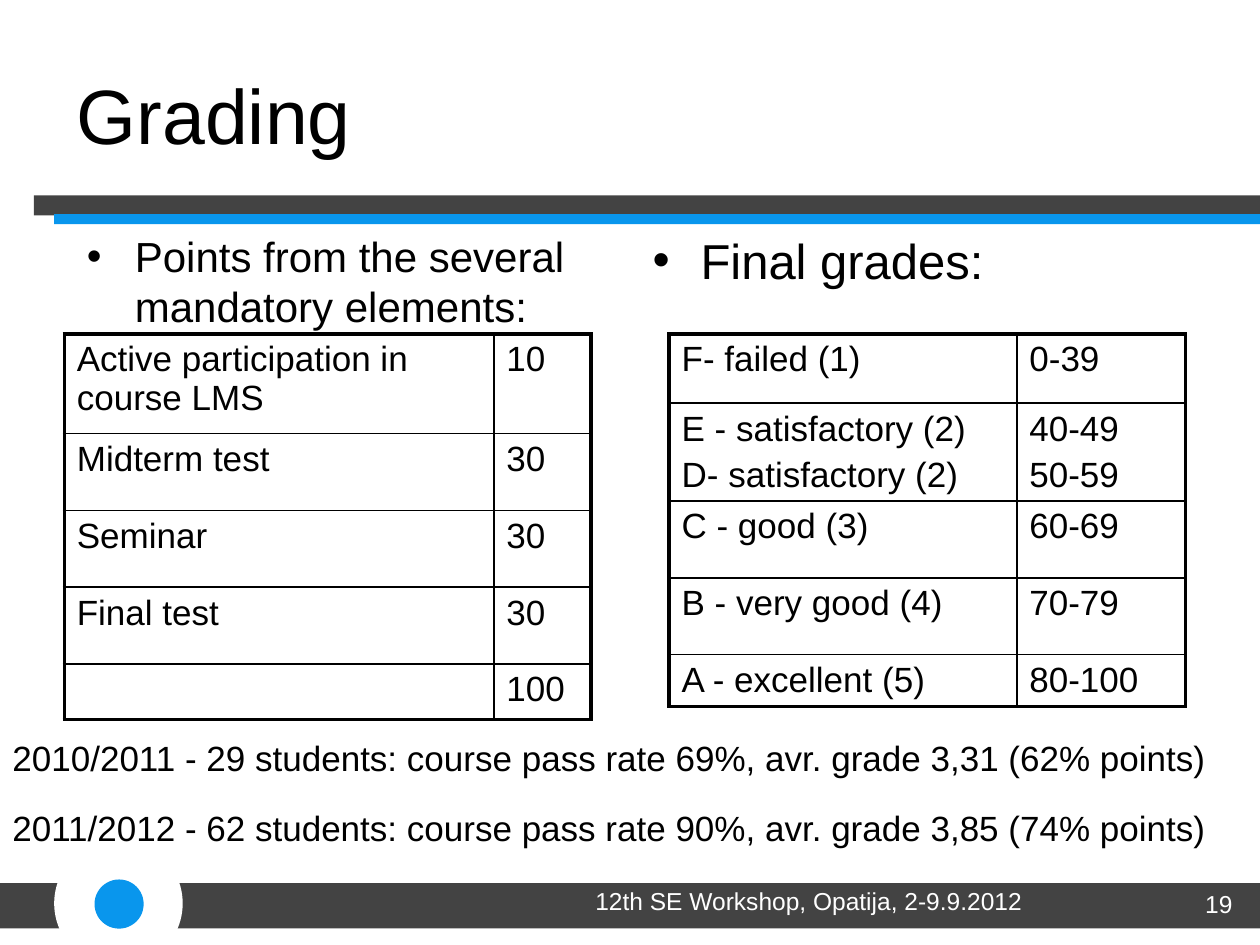
from lxml import etree
from pptx import Presentation
from pptx.dml.color import RGBColor
from pptx.enum.shapes import MSO_SHAPE
from pptx.enum.text import MSO_ANCHOR, MSO_AUTO_SIZE, PP_ALIGN
from pptx.oxml.ns import qn
from pptx.util import Inches, Pt

RECT, OVAL = MSO_SHAPE.RECTANGLE, MSO_SHAPE.OVAL
LEFT, CENTER, RIGHT = PP_ALIGN.LEFT, PP_ALIGN.CENTER, PP_ALIGN.RIGHT
TOP, MIDDLE = MSO_ANCHOR.TOP, MSO_ANCHOR.MIDDLE
NO_FIT = MSO_AUTO_SIZE.NONE
FIT_SHAPE = MSO_AUTO_SIZE.SHAPE_TO_FIT_TEXT


def rgb(value):
    return RGBColor.from_string(value)


class Deck:
    FONT = "Arial"
    BLACK, WHITE, GRAY, BLUE = "000000", "FFFFFF", "434343", "0996ED"
    THICK, THIN = Pt(2.25), Pt(1)

    def __init__(self, s):
        self.s = s

    def style(self, p, size, color=BLACK, align=LEFT):
        p.font.name = self.FONT
        p.font.size = Pt(size)
        p.font.color.rgb = rgb(color)
        p.alignment = align

    def shape(self, kind, x, y, w, h, color):
        sp = self.s.shapes.add_shape(kind, Inches(x), Inches(y), Inches(w), Inches(h))
        sp.shadow.inherit = False
        sp.fill.solid()
        sp.fill.fore_color.rgb = rgb(color)
        sp.line.fill.background()

    def placeholder(self, idx, text, x, y, w, h, size, anchor=TOP):
        sp = self.s.placeholders[idx]
        sp.left, sp.top, sp.width, sp.height = Inches(x), Inches(y), Inches(w), Inches(h)
        tf = sp.text_frame
        tf.text = text
        tf.auto_size = NO_FIT
        tf.vertical_anchor = anchor
        p = tf.paragraphs[0]
        self.style(p, size)
        return p

    def bullet(self, idx, text, x, y, w, h, size):
        p = self.placeholder(idx, text, x, y, w, h, size)
        p.space_before = Pt(size * 0.2)
        pPr = p._p.get_or_add_pPr()
        pPr.set("marL", str(Inches(0.38)))
        pPr.set("indent", str(Inches(-0.38)))

    def text(self, text, x, y, w, h, size, color=BLACK, align=LEFT, wrap=True):
        tb = self.s.shapes.add_textbox(Inches(x), Inches(y), Inches(w), Inches(h))
        tf = tb.text_frame
        tf.text = text
        tf.word_wrap = wrap
        tf.auto_size = NO_FIT if wrap else FIT_SHAPE
        self.style(tf.paragraphs[0], size, color, align)

    def borders(self, cell, widths):
        tcPr = cell._tc.get_or_add_tcPr()
        for i, (side, width) in enumerate(zip("LRTB", widths)):
            ln = etree.Element(qn(f"a:ln{side}"), w=str(width))
            fill = etree.SubElement(ln, qn("a:solidFill"))
            etree.SubElement(fill, qn("a:srgbClr"), val=self.BLACK)
            tcPr.insert(i, ln)

    def table(self, rows, x, y, widths, heights):
        n_rows, n_cols = len(rows), len(widths)
        table = self.s.shapes.add_table(
            n_rows, n_cols, Inches(x), Inches(y),
            Inches(sum(widths)), Inches(sum(heights))).table
        table.first_row = table.horz_banding = False
        for col, width in zip(table.columns, widths):
            col.width = Inches(width)
        for row, height in zip(table.rows, heights):
            row.height = Inches(height)
        for r, row in enumerate(rows):
            for c, text in enumerate(row):
                cell = table.cell(r, c)
                cell.text = text
                cell.fill.background()
                for p in cell.text_frame.paragraphs:
                    self.style(p, 20)
                    p.space_before = Pt(4)
                # Thick lines outside, thin lines inside
                outer = (c == 0, c == n_cols - 1, r == 0, r == n_rows - 1)
                self.borders(cell, [self.THICK if o else self.THIN for o in outer])


def main():
    prs = Presentation()
    prs.slide_width, prs.slide_height = Inches(10), Inches(7.5)
    s = prs.slides.add_slide(prs.slide_layouts[3])
    deck = Deck(s)

    # Footer band with its disc, and the double rule under the title
    deck.shape(RECT, 1.38, 7.01, 8.62, 0.36, deck.GRAY)
    deck.shape(RECT, 0, 7.01, 0.51, 0.36, deck.GRAY)
    deck.shape(OVAL, 0.43, 6.66, 1.02, 1.02, deck.WHITE)
    deck.shape(OVAL, 0.75, 6.98, 0.39, 0.39, deck.BLUE)
    deck.shape(RECT, 0.27, 1.55, 9.73, 0.16, deck.GRAY)
    deck.shape(RECT, 0.43, 1.7, 9.57, 0.08, deck.BLUE)

    # Title and column headings
    deck.placeholder(0, "Grading", 0.51, 0.28, 8.74, 1.25, 44, MIDDLE)
    deck.bullet(1, "Points from the several mandatory elements:",
                0.59, 1.78, 4.11, 4.5, 24)
    deck.bullet(2, "Final grades:", 5.08, 1.78, 4.42, 4.95, 28)

    # Points and grades
    points = [("Active participation in course LMS", "10"), ("Midterm test", "30"),
              ("Seminar", "30"), ("Final test", "30"), ("", "100")]
    grades = [("F- failed (1)", "0-39"),
              ("E - satisfactory (2)\nD- satisfactory (2)", "40-49\n50-59"),
              ("C - good (3)", "60-69"), ("B - very good (4)", "70-79"),
              ("A - excellent (5)", "80-100")]
    deck.table(points, 0.51, 2.65, [3.41, 0.77], [0.79, 0.61, 0.61, 0.61, 0.44])
    deck.table(grades, 5.31, 2.65, [2.76, 1.34], [0.55, 0.61, 0.61, 0.61, 0.38])

    # Results by year
    deck.text("2010/2011 - 29 students: course pass rate 69%, avr. grade 3,31 (62% points)",
              0, 5.8, 9.91, 0.44, 20, wrap=False)
    deck.text("2011/2012 - 62 students: course pass rate 90%, avr. grade 3,85 (74% points)",
              0, 6.35, 9.74, 0.44, 20, wrap=False)

    # Footer text
    deck.text("12th SE Workshop, Opatija, 2-9.9.2012", 3.74, 6.98, 5.36, 0.52, 14,
              deck.WHITE, CENTER)
    deck.text("19", 9.33, 7.01, 0.55, 0.52, 14, deck.WHITE, RIGHT)

    prs.save("out.pptx")


if __name__ == "__main__":
    main()
